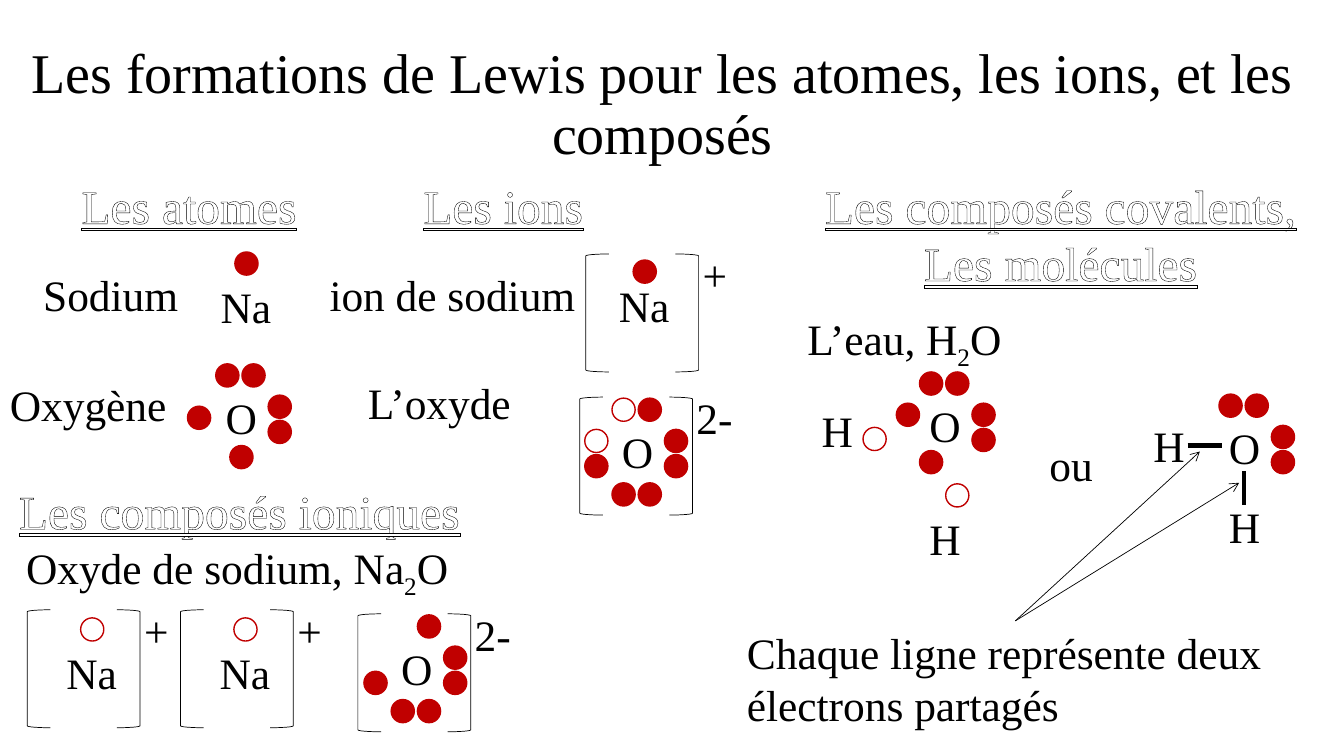
from dataclasses import dataclass

from lxml.etree import SubElement
from pptx import Presentation
from pptx.dml.color import RGBColor
from pptx.enum.shapes import MSO_CONNECTOR, MSO_SHAPE
from pptx.enum.text import MSO_ANCHOR, MSO_AUTO_SIZE, PP_ALIGN
from pptx.oxml import parse_xml
from pptx.oxml.ns import nsdecls, qn
from pptx.shapes.autoshape import Shape
from pptx.shapes.connector import Connector
from pptx.util import Inches, Pt

BLACK = RGBColor(0x00, 0x00, 0x00)
WHITE = RGBColor(0xFF, 0xFF, 0xFF)
RED = RGBColor(0xC0, 0x00, 0x00)
FONT = "Times New Roman"
DOT = 0.23
LINE = 0.62

# Places of electrons, measured from the corner of the symbol's box
TOP_L, TOP_R = (0, -0.22), (0.26, -0.22)
RIGHT_U, RIGHT_D = (0.52, 0.09), (0.52, 0.34)
BASE_L, BASE_R = (0, 0.62), (0.26, 0.62)
LEFT_U, LEFT_D = (-0.27, 0.09), (-0.27, 0.34)
LONE = (0.24, -0.23)
PAIRS = (TOP_L, TOP_R, RIGHT_U, RIGHT_D)


@dataclass(frozen=True)
class Atom:
    symbol: str
    left: float
    top: float
    full: tuple = ()
    empty: tuple = ()


@dataclass(frozen=True)
class Ion:
    left: float
    top: float
    charge: str


@dataclass(frozen=True)
class Label:
    text: str
    left: float
    top: float
    width: float


ATOMS = [
    Atom("Na", 2.09, 2.73, full=(LONE,)),
    Atom("O", 2.14, 3.83, full=(*PAIRS, (0.14, 0.59), (-0.28, 0.2))),
    Atom("Na", 6.04, 2.72, full=((0.24, -0.14),)),
    Atom("O", 6.07, 4.17, full=(TOP_R, RIGHT_U, RIGHT_D, BASE_L, BASE_R, LEFT_D),
         empty=(TOP_L, LEFT_U)),
    Atom("Na", 0.56, 6.36, empty=(LONE,)),
    Atom("Na", 2.08, 6.36, empty=(LONE,)),
    Atom("O", 3.88, 6.32, full=(TOP_R, RIGHT_U, RIGHT_D, BASE_L, BASE_R, LEFT_D)),
    Atom("O", 9.12, 3.91, full=(*PAIRS, (-0.23, 0.09), (0, 0.56))),
    Atom("H", 8.05, 3.96, empty=((0.51, 0.28),)),
    Atom("H", 9.12, 5.03, empty=((0.26, -0.23),)),
    Atom("O", 12.09, 4.13, full=PAIRS),
    Atom("H", 11.34, 4.11),
    Atom("H", 12.09, 4.91),
]
IONS = [
    Ion(5.81, 2.52, "+"),
    Ion(5.75, 3.94, "2-"),
    Ion(0.27, 6.05, "+"),
    Ion(1.79, 6.05, "+"),
    Ion(3.55, 6.09, "2-"),
]
LABELS = [
    Label("Sodium", 0.33, 2.61, 1.56),
    Label("Oxygène", 0, 3.7, 1.77),
    Label("ion de sodium", 3.17, 2.61, 2.67),
    Label("L’oxyde", 3.55, 3.68, 1.63),
    Label("Oxyde de sodium, Na_2_O", 0.16, 5.32, 4.45),
    Label("L’eau, H_2_O", 7.91, 3.05, 2.17),
    Label("ou", 10.31, 4.3, 0.64),
]
HEADS = [
    Label("Les atomes", 0.71, 1.7, 2.36),
    Label("Les ions", 4.1, 1.7, 1.81),
    Label("Les composés ioniques", 0.09, 4.73, 4.63),
    Label("Les composés covalents,\nLes molécules", 8.05, 1.7, 4.94),
]
BONDS = [((11.78, 4.42), (12.12, 4.42)), ((12.34, 5.01), (12.34, 4.67))]
TARGETS = [(11.9, 4.48), (12.29, 4.79)]

deck = Presentation()
deck.slide_width, deck.slide_height = Inches(13.33), Inches(7.5)
slide = deck.slides.add_slide(deck.slide_layouts[6])


def write(text: str, left: float, top: float, width: float, height: float = LINE, *,
          size: int = 31, color: RGBColor = BLACK, align: PP_ALIGN = PP_ALIGN.LEFT,
          wrap: bool = False, grow: bool = True, spacing: float = 1.0,
          head: bool = False) -> Shape:
    """Add a text box; underscores enclose subscripts, heads are outlined."""
    box = slide.shapes.add_textbox(Inches(left), Inches(top), Inches(width), Inches(height))
    frame = box.text_frame
    frame.word_wrap = wrap
    frame.auto_size = MSO_AUTO_SIZE.SHAPE_TO_FIT_TEXT if grow else MSO_AUTO_SIZE.NONE
    frame.vertical_anchor = MSO_ANCHOR.TOP if grow else MSO_ANCHOR.MIDDLE
    for row, line in enumerate(text.split("\n")):
        para = frame.add_paragraph() if row else frame.paragraphs[0]
        para.alignment, para.line_spacing = align, spacing
        for part, words in enumerate(line.split("_")):
            run = para.add_run()
            run.text = words
            font = run.font
            font.name, font.size, font.color.rgb = FONT, Pt(size), color
            props = run._r.get_or_add_rPr()
            if part % 2:
                props.set("baseline", "-25000")
            if head:
                font.underline = True
                props.insert(0, parse_xml(
                    f'<a:ln {nsdecls("a")} w="9525"><a:solidFill>'
                    f'<a:srgbClr val="{BLACK}"/></a:solidFill></a:ln>'))
    return box


def dot(left: float, top: float, fill: RGBColor) -> None:
    shape = slide.shapes.add_shape(
        MSO_SHAPE.OVAL, Inches(left), Inches(top), Inches(DOT), Inches(DOT))
    shape.shadow.inherit = False
    shape.fill.solid()
    shape.fill.fore_color.rgb = fill
    shape.line.color.rgb, shape.line.width = RED, Pt(1)


def bracket(left: float, top: float, flip: bool) -> None:
    shape = slide.shapes.add_shape(
        MSO_SHAPE.LEFT_BRACKET, Inches(left), Inches(top), Inches(0.23), Inches(1.17))
    shape.shadow.inherit = False
    shape.fill.background()
    shape.line.color.rgb, shape.line.width = BLACK, Pt(0.5)
    if flip:
        shape._element.spPr.find(qn("a:xfrm")).set("flipH", "1")


def draw_atom(atom: Atom) -> None:
    write(atom.symbol, atom.left, atom.top, 0.71 if atom.symbol == "Na" else 0.52)
    for spots, fill in ((atom.full, RED), (atom.empty, WHITE)):
        for dx, dy in spots:
            dot(atom.left + dx, atom.top + dy, fill)


def draw_ion(ion: Ion) -> None:
    bracket(ion.left, ion.top, False)
    bracket(ion.left + 0.89, ion.top, True)
    write(ion.charge, ion.left + 1.06, ion.top - 0.11, 0.45 if ion.charge == "+" else 0.56)


def link(start: tuple, end: tuple, width: float, arrow: bool = False) -> Connector:
    line = slide.shapes.add_connector(
        MSO_CONNECTOR.STRAIGHT, *(Inches(value) for value in (*start, *end)))
    line.line.color.rgb, line.line.width = BLACK, Pt(width)
    if arrow:
        SubElement(line.line._get_or_add_ln(), qn("a:tailEnd"), type="arrow")
    SubElement(line._element.spPr, qn("a:effectLst"))
    return line


write("Les formations de Lewis pour les atomes, les ions, et les composés",
      0, 0.4, 13.14, 1.3, size=40, align=PP_ALIGN.CENTER, wrap=True, grow=False, spacing=0.9)
for label in LABELS:
    write(label.text, label.left, label.top, label.width)
for label in HEADS:
    tall = "\n" in label.text
    write(label.text, label.left, label.top, label.width, 1.25 if tall else 0.67, size=34,
          color=WHITE, align=PP_ALIGN.CENTER if tall else PP_ALIGN.LEFT, head=True)
for atom in ATOMS:
    draw_atom(atom)
for ion in IONS:
    draw_ion(ion)
for start, end in BONDS:
    link(start, end, 3)
note = write("Chaque ligne représente deux électrons partagés", 7.31, 6.16, 5.52, 1.14, wrap=True)
for target in TARGETS:
    link((10.07, 6.16), target, 0.5, arrow=True).begin_connect(note, 0)

deck.save("out.pptx")
